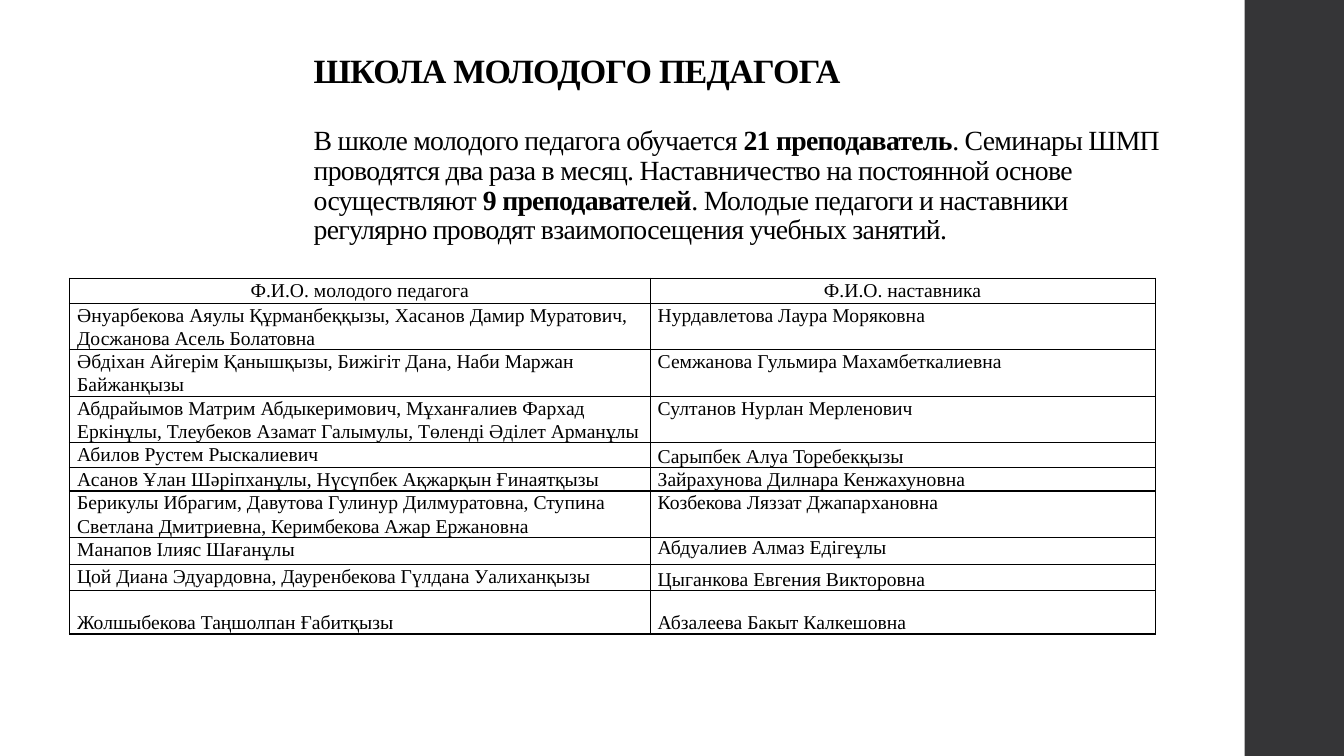
from dataclasses import dataclass

import pptx
import pptx.dml.color
import pptx.enum.shapes
import pptx.enum.text
import pptx.oxml
import pptx.oxml.ns
import pptx.util

Pt = pptx.util.Pt
ANCHOR = pptx.enum.text.MSO_ANCHOR
ALIGN = pptx.enum.text.PP_ALIGN

COLORS = {"text": "000000", "border": "000000", "sidebar": "353537"}
FONT = "Times New Roman"
COLUMN_WIDTHS = (414.72, 360.72)


@dataclass(frozen=True)
class TextPart:
    text: str
    size: float
    bold: bool = False


@dataclass(frozen=True)
class MentorRow:
    height: float
    teachers: str
    mentor: str
    teacher_anchor: ANCHOR = ANCHOR.TOP
    mentor_anchor: ANCHOR = ANCHOR.TOP
    mentor_spaced: bool = True


HEADING = [TextPart("ШКОЛА МОЛОДОГО ПЕДАГОГА", 24.3, True)]
INTRO = [
    TextPart("В школе молодого педагога обучается ", 19.8),
    TextPart("21 преподаватель", 19.8, True),
    TextPart(". Семинары ШМП проводятся два раза в месяц. "
             "Наставничество на постоянной основе осуществляют ", 19.8),
    TextPart("9 преподавателей", 19.8, True),
    TextPart(". Молодые педагоги и наставники регулярно проводят "
             "взаимопосещения учебных занятий.", 19.8),
]

ROWS = [
    MentorRow(18, "Ф.И.О. молодого педагога", "Ф.И.О. наставника"),
    MentorRow(32.4, "Әнуарбекова Аяулы Құрманбеққызы, Хасанов Дамир Муратович, "
              "Досжанова Асель Болатовна", "Нурдавлетова Лаура Моряковна"),
    MentorRow(31, "Әбдіхан Айгерім Қанышқызы, Бижігіт Дана, Наби Маржан Байжанқызы",
              "Семжанова Гульмира Махамбеткалиевна"),
    MentorRow(31.7, "Абдрайымов Матрим Абдыкеримович, Мұханғалиев Фархад Еркінұлы, "
              "Тлеубеков Азамат Галымулы, Төленді Әділет Арманұлы",
              "Султанов Нурлан Мерленович"),
    MentorRow(18, "Абилов Рустем Рыскалиевич", "Сарыпбек Алуа Торебекқызы",
              mentor_anchor=ANCHOR.BOTTOM),
    MentorRow(16.6, "Асанов Ұлан Шәріпханұлы, Нүсүпбек Ақжарқын Ғинаятқызы",
              "Зайрахунова Дилнара Кенжахуновна", teacher_anchor=ANCHOR.BOTTOM),
    MentorRow(31, "Берикулы Ибрагим, Давутова Гулинур Дилмуратовна, "
              "Ступина Светлана Дмитриевна, Керимбекова Ажар Ержановна",
              "Козбекова Ляззат Джапархановна"),
    MentorRow(19.4, "Манапов Ілияс Шағанұлы", "Абдуалиев Алмаз Едігеұлы",
              mentor_spaced=False),
    MentorRow(18.7, "Цой Диана Эдуардовна, Дауренбекова Гүлдана Уалиханқызы",
              "Цыганкова Евгения Викторовна", mentor_anchor=ANCHOR.BOTTOM,
              mentor_spaced=False),
    MentorRow(31, "Жолшыбекова Таңшолпан Ғабитқызы", "Абзалеева Бакыт Калкешовна",
              ANCHOR.BOTTOM, ANCHOR.BOTTOM, False),
]


def rgb(name: str) -> pptx.dml.color.RGBColor:
    return pptx.dml.color.RGBColor.from_string(COLORS[name])


def format_run(r, size: float, bold: bool = False) -> None:
    r.font.name = FONT
    r.font.size = Pt(size)
    r.font.bold = bold
    r.font.color.rgb = rgb("text")


def add_title_parts(p, parts: list[TextPart]) -> None:
    """Fill a title paragraph with slightly condensed runs."""
    p.alignment = ALIGN.LEFT
    p.line_spacing = 0.9
    for part in parts:
        r = p.add_run()
        r.text = part.text
        format_run(r, part.size, part.bold)
        r.font._element.set("spc", "-50")


def add_sidebar(s) -> None:
    sp = s.shapes.add_shape(pptx.enum.shapes.MSO_SHAPE.RECTANGLE,
                            Pt(889), Pt(0), Pt(71), Pt(540))
    sp.shadow.inherit = False
    sp.fill.solid()
    sp.fill.fore_color.rgb = rgb("sidebar")
    sp.line.fill.background()


def format_title(s) -> None:
    sp = s.shapes.title
    sp.left, sp.top, sp.width, sp.height = Pt(19.4), Pt(34.6), Pt(818.6), Pt(144.7)
    tf = sp.text_frame
    tf.word_wrap = True
    tf.auto_size = pptx.enum.text.MSO_AUTO_SIZE.NONE
    tf.vertical_anchor = ANCHOR.BOTTOM
    heading = tf.paragraphs[0]
    heading._p.get_or_add_pPr().set("marL", str(Pt(197.5)))
    add_title_parts(heading, HEADING)
    intro = tf.add_paragraph()
    intro.space_before = Pt(25)
    add_title_parts(intro, INTRO)


def add_borders(cell) -> None:
    for side in ("lnL", "lnR", "lnT", "lnB"):
        cell._tc.get_or_add_tcPr().append(pptx.oxml.parse_xml(
            f'<a:{side} {pptx.oxml.ns.nsdecls("a")} w="{Pt(1)}"><a:solidFill>'
            f'<a:srgbClr val="{COLORS["border"]}"/></a:solidFill></a:{side}>'))


def fill_cell(cell, text: str, anchor: ANCHOR, align: ALIGN, spaced: bool) -> None:
    cell.margin_left = cell.margin_right = Pt(5.4)
    cell.margin_top = cell.margin_bottom = Pt(0)
    cell.vertical_anchor = anchor
    add_borders(cell)
    cell.fill.background()
    p = cell.text_frame.paragraphs[0]
    p.text = text
    p.alignment = align
    if spaced:
        p.line_spacing = 1.07
        p.space_after = Pt(8)
    format_run(p.runs[0], 14)


def add_mentor_table(s) -> None:
    table = s.shapes.add_table(
        len(ROWS), len(COLUMN_WIDTHS), Pt(49.7), Pt(198.7), Pt(sum(COLUMN_WIDTHS)),
        Pt(sum(row.height for row in ROWS))).table
    table.first_row = table.horz_banding = False
    for column, width in zip(table.columns, COLUMN_WIDTHS):
        column.width = Pt(width)
    for i, row in enumerate(ROWS):
        table.rows[i].height = Pt(row.height)
        align = ALIGN.LEFT if i else ALIGN.CENTER
        fill_cell(table.cell(i, 0), row.teachers, row.teacher_anchor, align, True)
        fill_cell(table.cell(i, 1), row.mentor, row.mentor_anchor, align,
                  row.mentor_spaced)


def main() -> None:
    prs = pptx.Presentation()
    prs.slide_width, prs.slide_height = Pt(960), Pt(540)
    s = prs.slides.add_slide(prs.slide_layouts.get_by_name("Title Only"))
    add_sidebar(s)
    format_title(s)
    add_mentor_table(s)
    prs.save("out.pptx")


if __name__ == "__main__":
    main()
